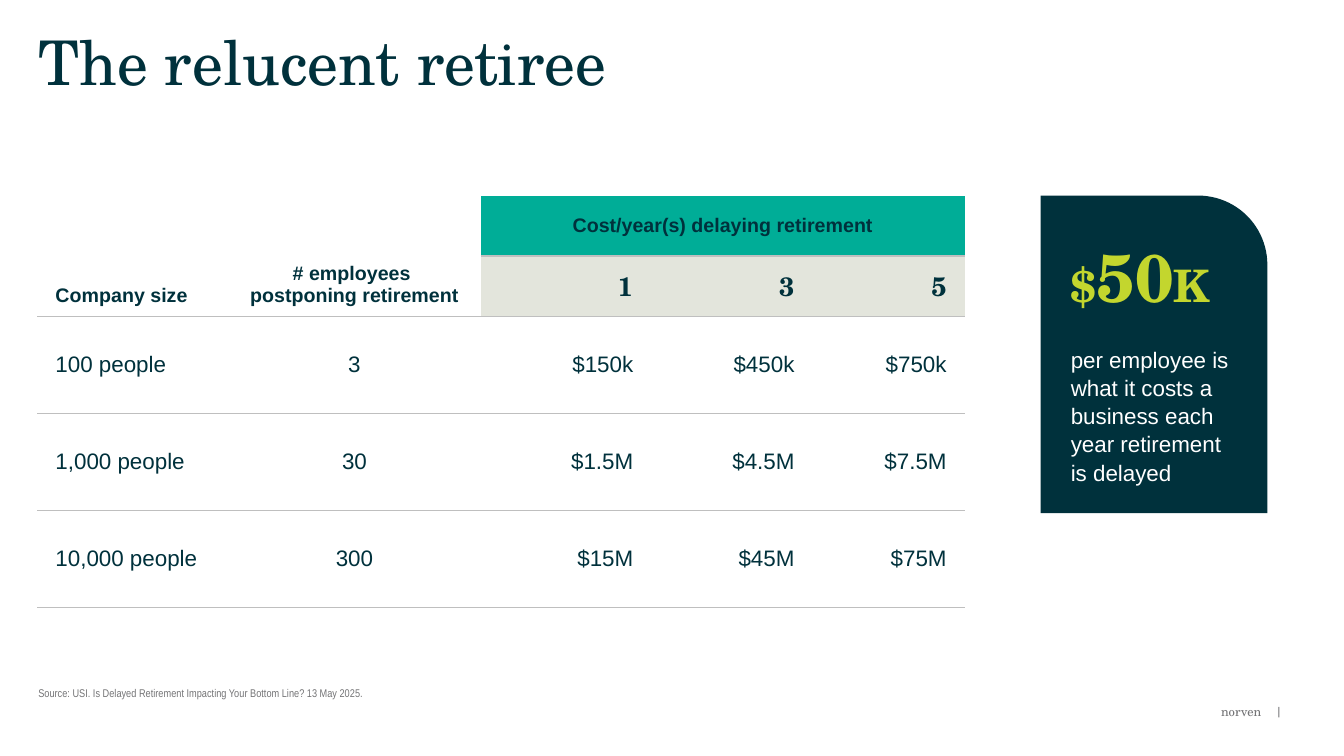
from lxml import etree
from pptx import Presentation
from pptx.dml.color import RGBColor
from pptx.enum.shapes import MSO_SHAPE
from pptx.enum.text import MSO_ANCHOR, PP_ALIGN
from pptx.oxml import parse_xml
from pptx.oxml.ns import nsdecls, qn
from pptx.util import Inches, Pt

NAVY = RGBColor(0x00, 0x31, 0x3C)
TEAL = RGBColor(0x00, 0xAD, 0x97)
SAND = RGBColor(0xE3, 0xE5, 0xDC)
LIME = RGBColor(0xC3, 0xD6, 0x2E)
GREY = RGBColor(0x74, 0x74, 0x76)
RULE = RGBColor(0xBF, 0xBF, 0xBF)
WHITE = RGBColor(0xFF, 0xFF, 0xFF)
SERIF, SANS, SLIM = "TeX Gyre Schola", "Arial", "Arial Narrow"
LEFT, MID, RIGHT = PP_ALIGN.LEFT, PP_ALIGN.CENTER, PP_ALIGN.RIGHT

deck = Presentation()
deck.slide_width, deck.slide_height = Inches(13.33), Inches(7.5)
WIDE, HIGH = deck.slide_width / 100, deck.slide_height / 100
slide = deck.slides.add_slide(deck.slide_layouts[6])


def write(para, text, size, face, color, bold=False):
    run = para.add_run()
    run.text = text
    font = run.font
    font.size, font.name, font.bold = Pt(size), face, bold
    font.color.rgb = color


def box(home, x, y, w, h, align=LEFT, anchor=MSO_ANCHOR.TOP):
    frame = home.add_textbox(int(x * WIDE), int(y * HIGH), int(w * WIDE), int(h * HIGH)).text_frame
    frame.margin_left = frame.margin_right = frame.margin_top = frame.margin_bottom = 0
    frame.word_wrap = True
    frame.vertical_anchor = anchor
    para = frame.paragraphs[0]
    para.alignment = align
    return para


title = box(slide.shapes, 2.85, 4.27, 94.5, 17.87)
title.line_spacing = 0.9
write(title, "The relucent retiree", 44, SERIF, NAVY)

source = box(slide.shapes, 2.85, 87.2, 94.5, 5.33, anchor=MSO_ANCHOR.BOTTOM)
write(source, "Source: USI. Is Delayed Retirement Impacting Your Bottom Line? 13 May 2025.", 8, SLIM, GREY)

for x, w, text in [(88, 5.85, "norven"), (94.4, 1.03, "|")]:
    write(box(slide.shapes, x, 93.07, w, 2.67, RIGHT), text, 9, SERIF, GREY)

ROWS = [
    ["Company size", "# employees |postponing retirement", "Cost/year(s) delaying retirement", "", ""],
    ["", "", "1", "3", "5"],
    ["100 people", "3", "$150k", "$450k", "$750k"],
    ["1,000 people", "30", "$1.5M", "$4.5M", "$7.5M"],
    ["10,000 people", "300", "$15M", "$45M", "$75M"],
]
COLS = [14.18, 18.83, 12, 12, 12]
TALL = [8, 7.73, 12.85, 12.85, 12.85]
ALIGN = [LEFT, MID, RIGHT, RIGHT, RIGHT]
table = slide.shapes.add_table(
    len(ROWS), len(COLS), int(2.78 * WIDE), int(25.87 * HIGH),
    int(sum(COLS) * WIDE), int(sum(TALL) * HIGH)).table
table.first_row = table.horz_banding = False
table._tbl.tblPr.find(qn("a:tableStyleId")).text = "{2D5ABB26-0587-4C30-8999-92F81FD0307C}"
for col, w in zip(table.columns, COLS):
    col.width = int(w * WIDE)
for row, h in zip(table.rows, TALL):
    row.height = int(h * HIGH)
for c in (0, 1):
    table.cell(0, c).merge(table.cell(1, c))
table.cell(0, 2).merge(table.cell(0, 4))

for r, line in enumerate(ROWS):
    for c, text in enumerate(line):
        cell = table.cell(r, c)
        head = r < 2
        cell.margin_left = Inches(0.18 if c == 0 else 0.09)
        cell.margin_right = Inches(0.18 if c == 4 else 0.09)
        cell.margin_top = Inches(0.04)
        cell.margin_bottom = Inches(0.09 if head and c < 2 else 0.04)
        cell.vertical_anchor = MSO_ANCHOR.BOTTOM if head and c < 2 else MSO_ANCHOR.MIDDLE
        if head and c > 1:
            cell.fill.solid()
            cell.fill.fore_color.rgb = SAND if r else TEAL
        else:
            cell.fill.background()
        rule = parse_xml(f'<a:lnB {nsdecls("a")} w="12700"><a:solidFill>'
                         f'<a:srgbClr val="{RULE}"/></a:solidFill></a:lnB>')
        cell._tc.get_or_add_tcPr().insert(0, rule)
        if not text:
            continue
        para = cell.text_frame.paragraphs[0]
        para.alignment = MID if r == 0 and c == 2 else ALIGN[c]
        size, face = [(14, SANS), (19, SERIF)][r] if head else (16, SANS)
        for i, part in enumerate(text.split("|")):
            if i:
                para.add_line_break()
            write(para, part, size, face, NAVY, head)

group = slide.shapes.add_group_shape().shapes
card = group.add_shape(MSO_SHAPE.ROUND_1_RECTANGLE, int(77.42 * WIDE), int(25.87 * HIGH),
                       int(16.88 * WIDE), int(42 * HIGH))
card.adjustments[0] = 0.305
card.shadow.inherit = False
card.fill.solid()
card.fill.fore_color.rgb = NAVY
card.line.fill.background()

price = box(group, 79.67, 31.07, 12.68, 9.07)
for text, size in [("$", 32), ("50", 48), ("K", 32)]:
    write(price, text, size, SERIF, LIME, True)
note = box(group, 79.67, 45.6, 12.68, 9.07)
note.line_spacing = 1.05
write(note, "per employee is what it costs a business each year retirement is delayed", 16, SANS, WHITE)

deck.save("out.pptx")
